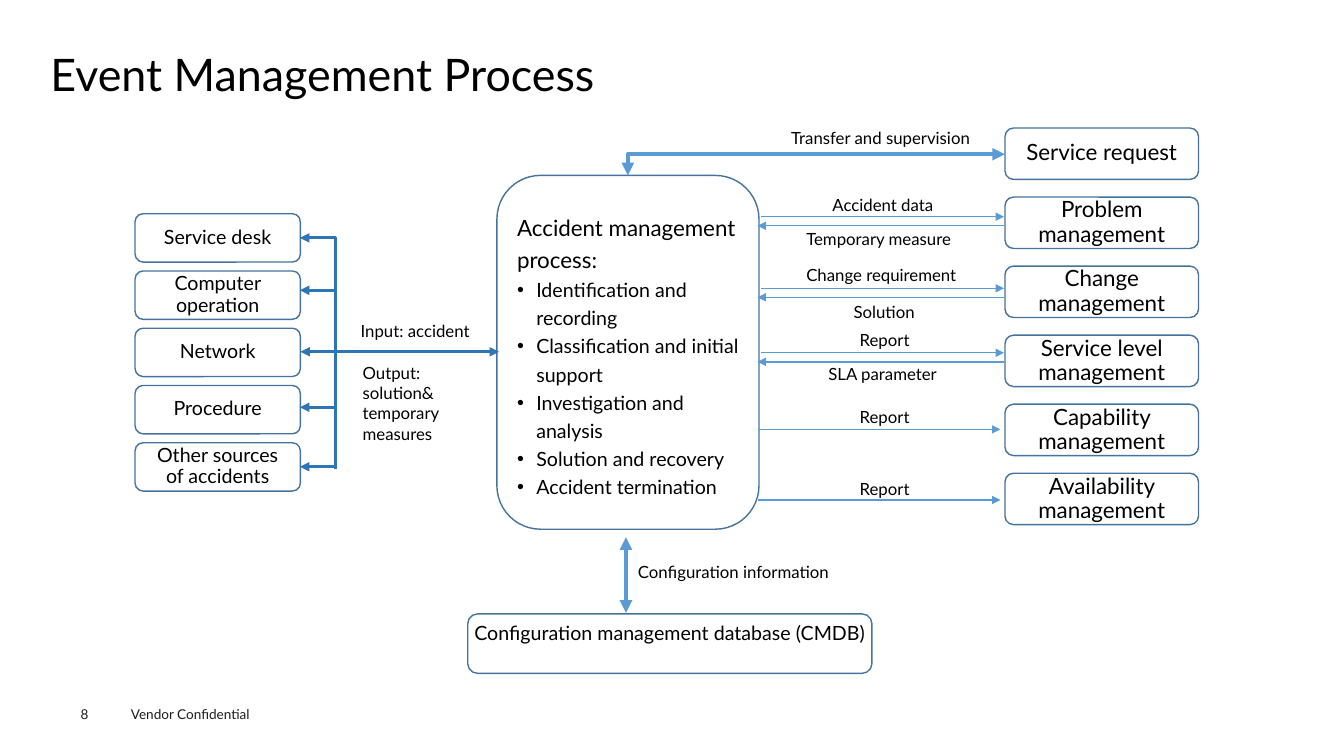
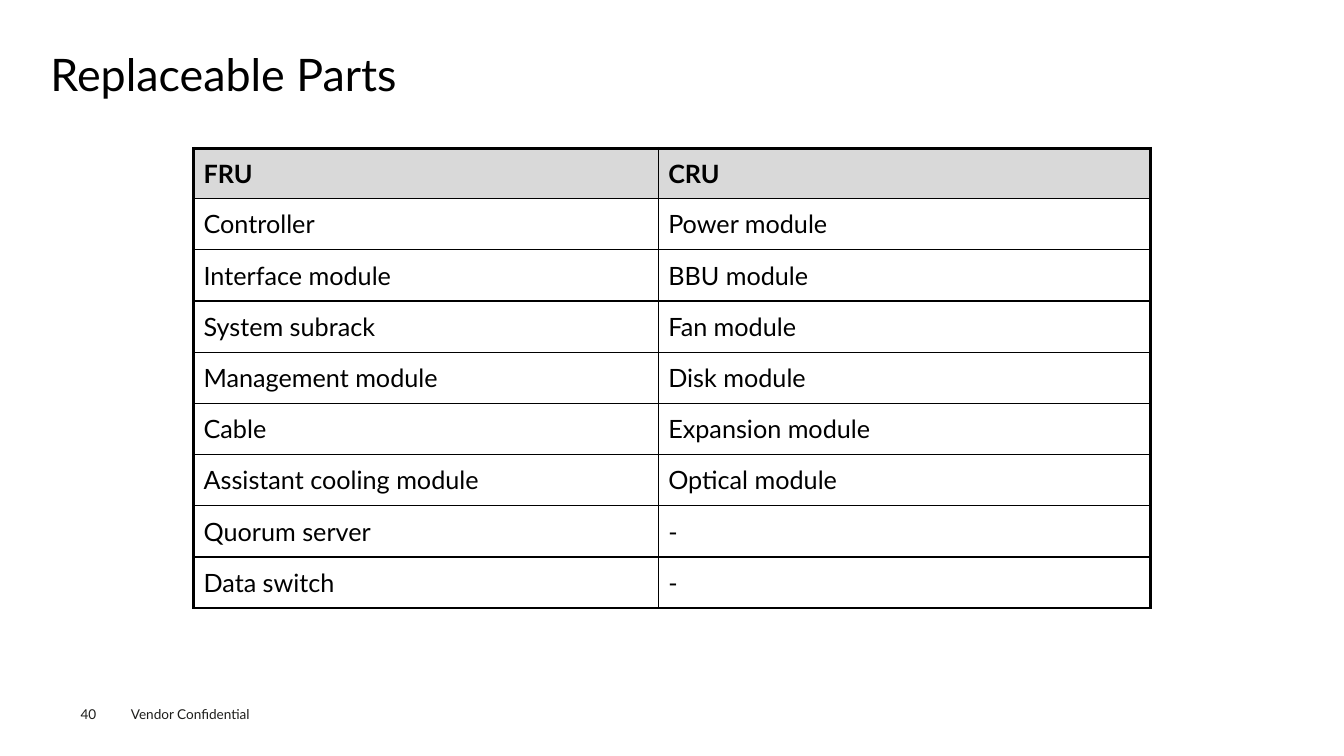
from typing import NamedTuple

from lxml.etree import SubElement
from pptx import Presentation
from pptx.dml.color import RGBColor
from pptx.enum.shapes import MSO_CONNECTOR as Conn, MSO_SHAPE as Shape
from pptx.enum.text import MSO_ANCHOR as Anchor, MSO_AUTO_SIZE as Fit, PP_ALIGN as Align
from pptx.oxml.ns import qn
from pptx.util import Emu, Inches, Pt

# Grid: one column or row is a tenth of an inch
STEP = Inches(0.1)
COLS, ROWS = 133.33, 75

FONT = "Lato"
BLACK = RGBColor(0x00, 0x00, 0x00)
INK = RGBColor(0x1D, 0x1D, 0x1B)
EDGE = RGBColor(0x43, 0x73, 0x9E)
NAVY = RGBColor(0x2E, 0x75, 0xB6)
SKY = RGBColor(0x5B, 0x9B, 0xD5)
GREY = RGBColor(0xD9, 0xD9, 0xD9)


class Box(NamedTuple):
    col: float
    row: float
    wide: float
    high: float


class Label(NamedTuple):
    text: str
    col: float
    row: float
    wide: float
    high: float = 3
    wrap: bool = False


class Line(NamedTuple):
    x1: float
    y1: float
    x2: float
    y2: float
    color: RGBColor = SKY
    width: float = 1
    head: bool = False
    tail: bool = True
    bent: bool = False


# Slide 1: content
SOURCES = ["Service desk", "Computer operation", "Network", "Procedure",
           "Other sources of accidents"]
TARGETS = ["Service request", "Problem management", "Change management",
           "Service level management", "Capability management",
           "Availability management"]
STEPS = ["Accident management process:", "Identification and recording",
         "Classification and initial support", "Investigation and analysis",
         "Solution and recovery", "Accident termination"]
LABELS = [
    Label("Input: accident", 34.8, 31.3, 13.3),
    Label("Output:\nsolution&\ntemporary measures", 35, 35.5, 10.4, 9.1, True),
    Label("Transfer and supervision", 77.5, 12.2, 20.8),
    Label("Accident data", 81.6, 18.8, 12.5),
    Label("Temporary measure", 79, 22.2, 19.2),
    Label("Change requirement", 79, 25.8, 17.8),
    Label("Solution", 83.7, 29.4, 8.3),
    Label("SLA parameter", 81.2, 35.6, 13.4),
    Label("Configuration information", 62.3, 55.2, 22.1),
] + [Label("Report", 84.3, row, 7.1) for row in (32.2, 39.9, 47)]

BUS = 33.3
LINES = [
    # Branches, bus and main link on the left
    *[Line(BUS, row, 29.75, row, NAVY, 2.25) for row in (23.6, 28.8, 40.4, 46.3)],
    Line(BUS, 23.5, BUS, 46.5, NAVY, 2.25, tail=False),
    Line(29.8, 34.9, 49.5, 34.9, NAVY, 2.25, head=True),
    # Links to the database and to the service request
    Line(62.1, 53.3, 62.1, 60.8, SKY, 3, head=True),
    Line(99.7, 15.3, 62.3, 17.4, SKY, 3, head=True, bent=True),
    # Exchanges and reports on the right
    *[Line(75.5, row, 99.6, row) for row in (21.5, 28.6, 35)],
    *[Line(99.6, row + 0.9, 75.15, row + 0.9) for row in (21.5, 28.6, 35)],
    *[Line(75.2, row, 99.25, row) for row in (42.6, 49.6)],
]

# Slide 2: content
PARTS = [("FRU", "CRU"), ("Controller", "Power module"),
         ("Interface module", "BBU module"), ("System subrack", "Fan module"),
         ("Management module", "Disk module"), ("Cable", "Expansion module"),
         ("Assistant cooling module", "Optical module"),
         ("Quorum server", "-"), ("Data switch", "-")]


def span(units: float) -> Emu:
    return Emu(round(units * STEP))


def area(box: Box) -> list[Emu]:
    return [span(unit) for unit in box]


def place(shape, box: Box) -> None:
    shape.left, shape.top, shape.width, shape.height = area(box)


def bullet(para, gap: float) -> None:
    props = para._p.get_or_add_pPr()
    props.set("marL", str(span(gap)))
    props.set("indent", str(-span(gap)))
    if gap:
        SubElement(props, qn("a:buFont")).set("typeface", "Arial")
        SubElement(props, qn("a:buChar")).set("char", "•")
    else:
        SubElement(props, qn("a:buNone"))


def write(frame, text: str, *, size: float, color=BLACK, bold=False,
          align=Align.LEFT, anchor=Anchor.TOP, lead=1.0, wrap=True,
          inset=(1, 0.5)) -> None:
    """Fill a text frame; every line of the text is a paragraph."""
    frame.auto_size = Fit.NONE
    frame.word_wrap = wrap
    frame.vertical_anchor = anchor
    frame.margin_left = frame.margin_right = span(inset[0])
    frame.margin_top = frame.margin_bottom = span(inset[1])
    for i, part in enumerate(text.split("\n")):
        para = frame.add_paragraph() if i else frame.paragraphs[0]
        para.alignment = align
        para.line_spacing = lead
        para.space_before = Pt(0)
        run = para.add_run()
        run.text = part
        font = run.font
        font.name, font.size, font.bold = FONT, Pt(size), bold
        font.color.rgb = color


def note(slide, text: str, box: Box, **style) -> None:
    write(slide.shapes.add_textbox(*area(box)).text_frame, text, **style)


def panel(slide, box: Box, text: str = "", **style) -> None:
    shape = slide.shapes.add_shape(Shape.ROUNDED_RECTANGLE, *area(box))
    shape.shadow.inherit = False
    shape.fill.background()
    shape.line.color.rgb = EDGE
    shape.line.width = Pt(1)
    if text:
        write(shape.text_frame, text, **style)


def link(slide, line: Line) -> None:
    kind = Conn.ELBOW if line.bent else Conn.STRAIGHT
    ends = [span(unit) for unit in line[:4]]
    conn = slide.shapes.add_connector(kind, *ends)
    conn.line.color.rgb = line.color
    conn.line.width = Pt(line.width)
    props = conn._element.spPr
    if line.bent:
        props.find(qn("a:prstGeom")).set("prst", "bentConnector2")
    stroke = props.find(qn("a:ln"))
    for tag, shown in (("a:headEnd", line.head), ("a:tailEnd", line.tail)):
        if shown:
            SubElement(stroke, qn(tag)).set("type", "triangle")
    SubElement(props, qn("a:effectLst"))


def start(deck, layout: int, title: str, page: int):
    """Add a slide with the shared title and footer."""
    slide = deck.slides.add_slide(deck.slide_layouts[layout])
    place(slide.shapes.title, Box(5, 4.9, 123.5, 5.4))
    write(slide.shapes.title.text_frame, title, size=32, lead=0.9,
          anchor=Anchor.MIDDLE, inset=(0, 0))
    note(slide, "Vendor Confidential", Box(12, 69.5, 16, 2.7), size=9.7, color=INK)
    note(slide, str(page), Box(8, 70, 5.5, 1.6), size=9.7, color=INK, inset=(0, 0))
    return slide


def border(cell, sides: dict[str, float]) -> None:
    props = cell._tc.get_or_add_tcPr()
    for side, width in sides.items():
        edge = SubElement(props, qn(f"a:ln{side}"), w=str(Pt(width)))
        paint = SubElement(edge, qn("a:solidFill"))
        SubElement(paint, qn("a:srgbClr")).set("val", str(BLACK))


def flow(deck) -> None:
    slide = start(deck, 1, "Event Management Process", 8)
    mid = {"align": Align.CENTER, "anchor": Anchor.MIDDLE, "lead": 0.9}

    # Columns of sources and targets
    for i, name in enumerate(SOURCES):
        panel(slide, Box(13.4, 21.2 + 5.68 * i, 16.4, 4.8), name,
              size=14, inset=(0.95, 0), **mid)
    for i, name in enumerate(TARGETS):
        panel(slide, Box(99.7, 12.7 + 6.85 * i, 19.2, 5.1), name,
              size=16, inset=(1, 0), **mid)

    # Central process
    panel(slide, Box(49.3, 17.4, 26, 35.1))
    body = slide.placeholders[1]
    place(body, Box(50.3, 20.2, 25.6, 30.1))
    write(body.text_frame, "\n".join(STEPS), size=14, lead=1.2)
    for i, para in enumerate(body.text_frame.paragraphs):
        bullet(para, 1.9 if i else 0)
    body.text_frame.paragraphs[0].runs[0].font.size = Pt(16)

    # Database
    panel(slide, Box(46.4, 60.9, 40.1, 5.9),
          "Configuration management database (CMDB)", size=14,
          align=Align.CENTER, wrap=False, inset=(0.5, 0.4))

    # Arrows and their labels
    for line in LINES:
        link(slide, line)
    for text, col, row, wide, high, wrap in LABELS:
        note(slide, text, Box(col, row, wide, high), size=12, wrap=wrap)


def parts(deck) -> None:
    slide = start(deck, 5, "Replaceable Parts", 40)
    last = len(PARTS) - 1
    box = Box(19.2, 14.7, 94.9, 45.6)
    table = slide.shapes.add_table(len(PARTS), 2, *area(box)).table
    table.first_row = table.horz_banding = False
    for column, wide in zip(table.columns, (46.1, 48.8)):
        column.width = span(wide)
    for r, names in enumerate(PARTS):
        table.rows[r].height = span(5.08 if r else 5)
        for c, name in enumerate(names):
            cell = table.cell(r, c)
            outer = {"L": c == 0, "R": c == 1, "T": r == 0, "B": r == last}
            border(cell, {side: 2.25 if out else 1 for side, out in outer.items()})
            if r:
                cell.fill.background()
            else:
                cell.fill.solid()
                cell.fill.fore_color.rgb = GREY
            cell.vertical_anchor = Anchor.MIDDLE
            write(cell.text_frame, name, size=18, bold=r == 0, anchor=Anchor.MIDDLE)


def main() -> None:
    deck = Presentation()
    deck.slide_width, deck.slide_height = span(COLS), span(ROWS)
    flow(deck)
    parts(deck)
    deck.save("out.pptx")


if __name__ == "__main__":
    main()
